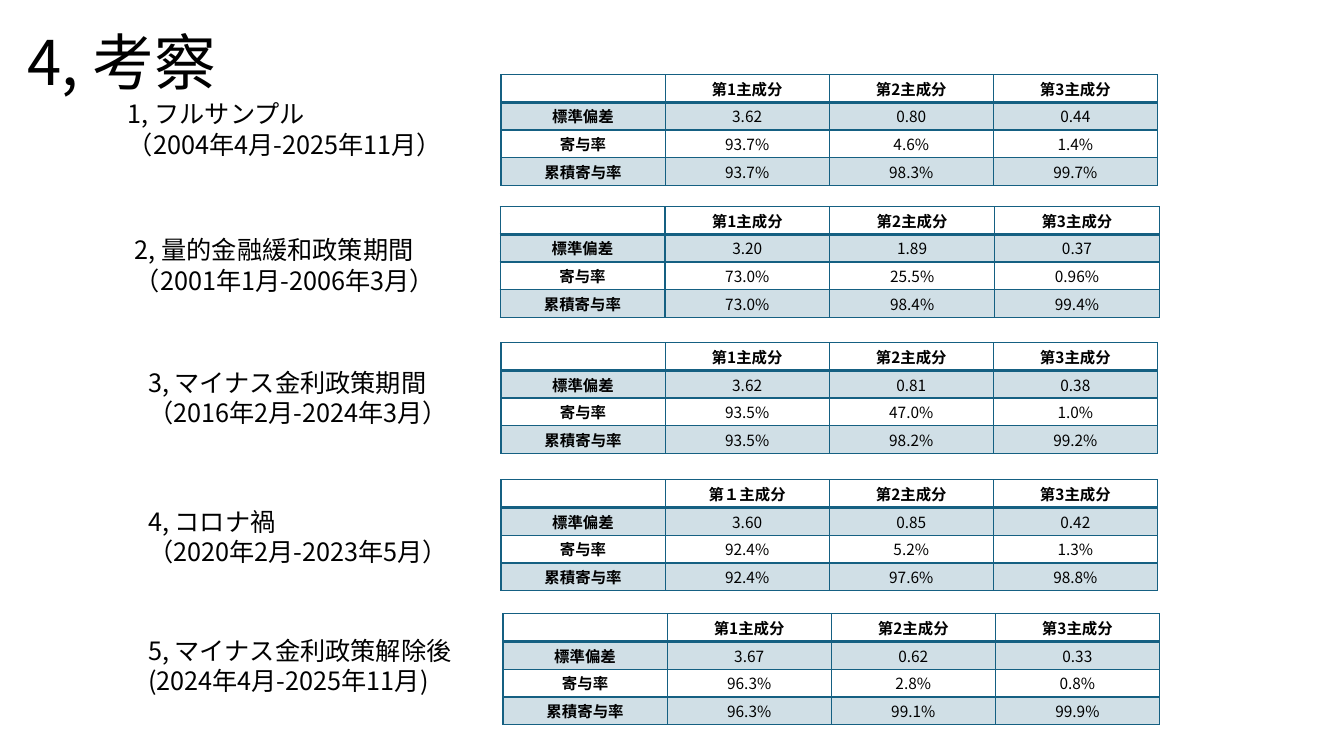
from lxml import etree
from pptx import Presentation
from pptx import util as u
from pptx.dml.color import RGBColor
from pptx.enum import text
from pptx.oxml.ns import qn


def colour(value):
    return RGBColor.from_string(value)


class Deck:
    """Hold the style and the current slide; lengths are percentages of its size."""

    face = "Noto Sans CJK JP"
    ink = "000000"
    accent = "156082"
    tint = 20

    def __init__(self):
        self.show = Presentation()
        self.show.slide_width = u.Inches(13.33)
        self.show.slide_height = u.Inches(7.5)
        self.slide = self.show.slides.add_slide(self.show.slide_layouts[5])

    def area(self, left, top, width, height):
        across, down = self.show.slide_width / 100, self.show.slide_height / 100
        return [u.Emu(round(share * unit)) for share, unit in
                zip((left, top, width, height), (across, down, across, down))]

    def style(self, paragraph, size, bold=False):
        font = paragraph.font
        font.name, font.size, font.bold = self.face, u.Pt(size), bold
        font.color.rgb = colour(self.ink)
        defaults = paragraph._p.pPr.find(qn("a:defRPr"))
        etree.SubElement(defaults, qn("a:ea"), typeface=self.face)

    def title(self, wording, *place):
        heading = self.slide.shapes.title
        heading.left, heading.top, heading.width, heading.height = self.area(*place)
        frame = heading.text_frame
        frame.text = wording
        frame.auto_size = text.MSO_AUTO_SIZE.NONE
        frame.vertical_anchor = text.MSO_ANCHOR.MIDDLE
        line = frame.paragraphs[0]
        line.alignment, line.line_spacing = text.PP_ALIGN.LEFT, 0.9
        self.style(line, 44)

    def label(self, wording, *place):
        frame = self.slide.shapes.add_textbox(*self.area(*place)).text_frame
        frame.word_wrap = True
        frame.auto_size = text.MSO_AUTO_SIZE.SHAPE_TO_FIT_TEXT
        frame.text = wording
        for line in frame.paragraphs:
            self.style(line, 18)

    def border(self, cell, side, points):
        edge = etree.SubElement(cell._tc.get_or_add_tcPr(), qn(f"a:ln{side}"),
                                w=str(u.Pt(points)))
        paint = etree.SubElement(edge, qn("a:solidFill"))
        etree.SubElement(paint, qn("a:srgbClr"), val=self.accent)

    def cell(self, cell, wording, row, column):
        cell.text = wording
        cell.vertical_anchor = text.MSO_ANCHOR.MIDDLE
        cell.margin_left = cell.margin_right = u.Inches(0.07)
        cell.margin_top = cell.margin_bottom = 0
        line = cell.text_frame.paragraphs[0]
        line.alignment = text.PP_ALIGN.CENTER
        self.style(line, 11, bold=row == 0 or column == 0)
        if not wording:
            etree.SubElement(line._p, qn("a:endParaRPr"), sz="1100")
        for side in "LRTB":
            under_header = (row, side) in ((0, "B"), (1, "T"))
            self.border(cell, side, 2 if under_header else 1)
        if row % 2:
            cell.fill.solid()
            cell.fill.fore_color.rgb = colour(self.accent)
            shade = cell._tc.tcPr.find(qn("a:solidFill")).find(qn("a:srgbClr"))
            etree.SubElement(shade, qn("a:alpha"), val=str(self.tint * 1000))
        else:
            cell.fill.background()

    def table(self, rows, *place):
        grid = self.slide.shapes.add_table(len(rows), len(rows[0]), *self.area(*place)).table
        grid.first_row = grid.horz_banding = False
        for r, row in enumerate(rows):
            for c, wording in enumerate(row):
                self.cell(grid.cell(r, c), wording, r, c)


MEASURES = ("標準偏差", "寄与率", "累積寄与率")
PERIODS = [
    ("1, フルサンプル\n（2004年4月-2025年11月）", (8.78, 12.4, 25.28), (37.28, 9.87, 48.84), "1",
     ("3.62 0.80 0.44", "93.7% 4.6% 1.4%", "93.7% 98.3% 99.7%")),
    ("2, 量的金融緩和政策期間\n（2001年1月-2006年3月）", (9.3, 30.4, 24.23), (37.21, 27.33, 49.06), "1",
     ("3.20 1.89 0.37", "73.0% 25.5% 0.96%", "73.0% 98.4% 99.4%")),
    ("3, マイナス金利政策期間\n（2016年2月-2024年3月）", (10.28, 47.87, 24.23), (37.28, 45.33, 48.84), "1",
     ("3.62 0.81 0.38", "93.5% 47.0% 1.0%", "93.5% 98.2% 99.2%")),
    ("4, コロナ禍\n（2020年2月-2023年5月）", (10.28, 66.27, 24.23), (37.28, 63.47, 48.84), "１",
     ("3.60 0.85 0.42", "92.4% 5.2% 1.3%", "92.4% 97.6% 98.8%")),
    ("5, マイナス金利政策解除後\n(2024年4月-2025年11月)", (10.28, 83.33, 24.46), (37.43, 81.2, 48.84), "1",
     ("3.67 0.62 0.33", "96.3% 2.8% 0.8%", "96.3% 99.1% 99.9%")),
]


def main():
    deck = Deck()
    deck.title("4, 考察", 1.28, -0.93, 86.27, 19.33)
    for period, label_place, table_place, first, results in PERIODS:
        header = ["", *(f"第{number}主成分" for number in (first, "2", "3"))]
        body = [[measure, *values.split()] for measure, values in zip(MEASURES, results)]
        deck.table([header, *body], *table_place, 14.67)
        deck.label(period, *label_place, 9.47)
    deck.show.save("out.pptx")


if __name__ == "__main__":
    main()
